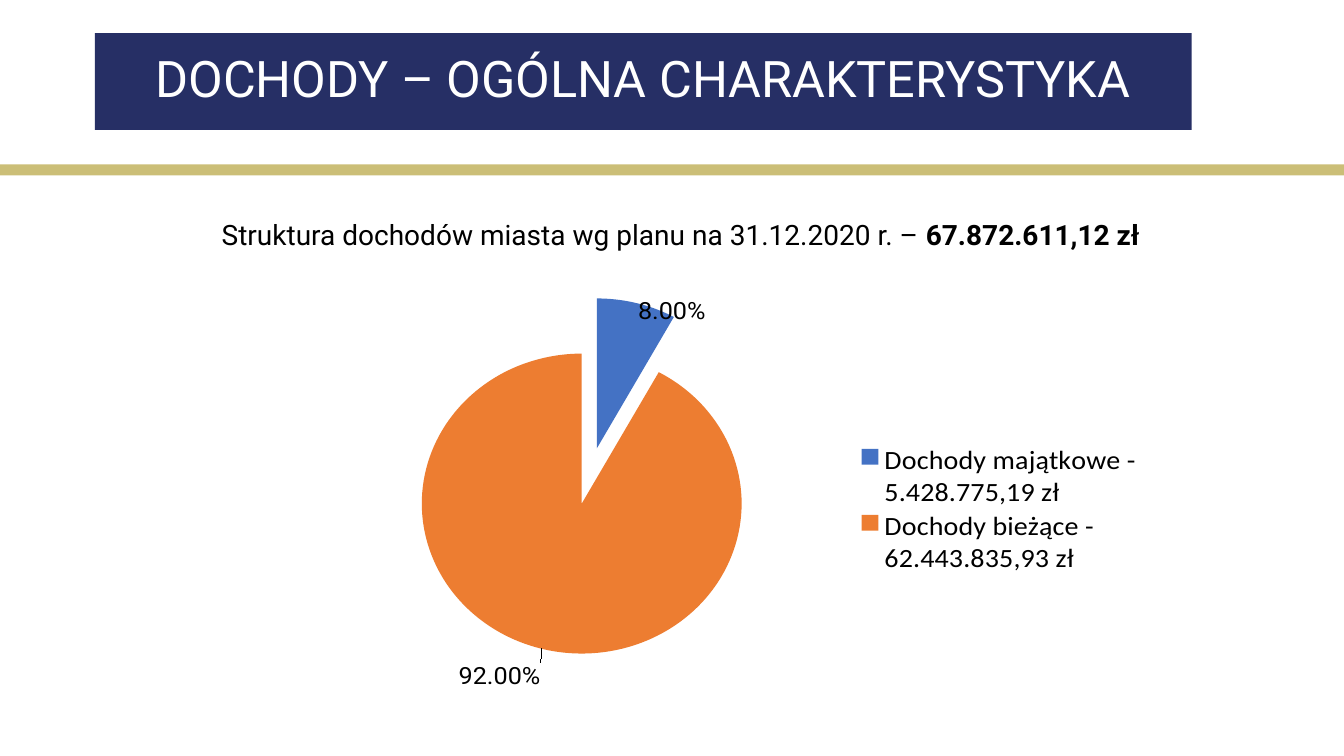
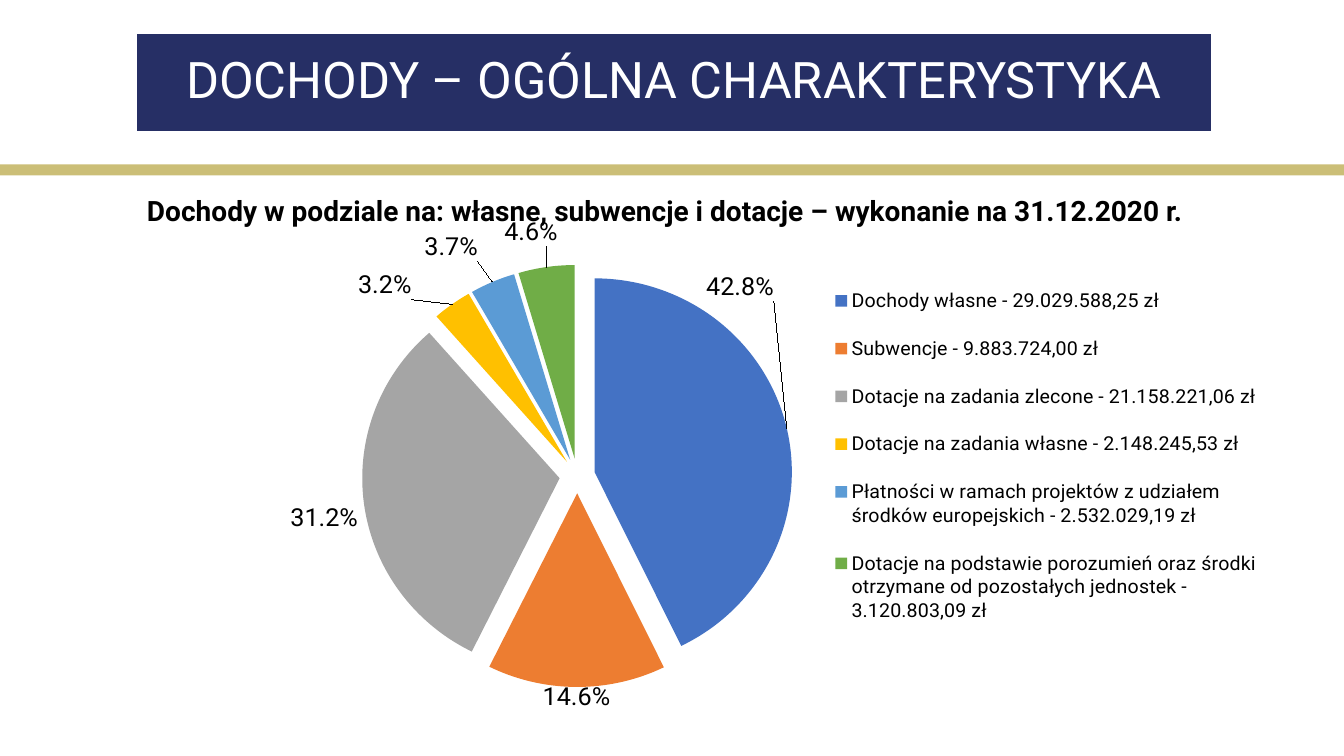
from lxml.etree import SubElement
from pptx import Presentation
from pptx.chart.data import CategoryChartData
from pptx.dml.color import RGBColor
from pptx.enum.chart import XL_CHART_TYPE, XL_LABEL_POSITION, XL_LEGEND_POSITION
from pptx.enum.shapes import MSO_SHAPE
from pptx.enum.text import MSO_ANCHOR, PP_ALIGN
from pptx.oxml.ns import qn
from pptx.util import Inches, Pt

COLORS = {
    "navy": "262F65", "gold": "CBBE77", "white": "FFFFFF", "black": "000000",
    "blue": "4472C4", "orange": "ED7D31", "gray": "A5A5A5",
    "yellow": "FFC000", "sky": "5B9BD5", "green": "70AD47",
}
SLICE_COLORS = ["blue", "orange", "gray", "yellow", "sky", "green"]
SLIDE_WIDTH, SLIDE_HEIGHT = 13.33, 7.5
FONT = "Roboto"
TITLE = "DOCHODY – OGÓLNA CHARAKTERYSTYKA"


def rgb(name):
    """Return the named colour."""
    return RGBColor.from_string(COLORS[name])


def style_font(font, size, color="black", name=FONT, bold=False):
    """Apply size, colour, face and weight to a font."""
    font.size, font.name, font.bold = Pt(size), name, bold
    font.color.rgb = rgb(color)


def write_text(frame, runs, size=20, color="black", align=PP_ALIGN.LEFT,
               anchor=MSO_ANCHOR.TOP, spacing=1.0):
    """Write one paragraph from (text, bold) pairs."""
    frame.word_wrap = True
    frame.vertical_anchor = anchor
    paragraph = frame.paragraphs[0]
    paragraph.alignment, paragraph.line_spacing = align, spacing
    for text, bold in runs:
        run = paragraph.add_run()
        run.text = text
        style_font(run.font, size, color, bold=bold)


def add_bar(slide, box, color):
    """Add a plain filled rectangle."""
    bar = slide.shapes.add_shape(MSO_SHAPE.RECTANGLE, *map(Inches, box))
    bar.shadow.inherit = False
    bar.fill.solid()
    bar.fill.fore_color.rgb = rgb(color)
    bar.line.fill.background()
    return bar


def add_header(slide, box):
    """Add the gold band and the navy title bar."""
    add_bar(slide, (0, 1.63, SLIDE_WIDTH, 0.11), "gold")
    title = add_bar(slide, box, "navy")
    write_text(title.text_frame, [(TITLE, False)], size=36, color="white",
               align=PP_ALIGN.CENTER, anchor=MSO_ANCHOR.MIDDLE, spacing=0.9)


def add_subtitle(slide, box, runs, **layout):
    """Add the line of text above the chart."""
    subtitle = slide.shapes.add_textbox(*map(Inches, box))
    write_text(subtitle.text_frame, runs, **layout)


def place(parent, index, x, y, size=None):
    """Give a chart part a manual layout in fractions of the chart."""
    for old in parent.findall(qn("c:layout")):
        parent.remove(old)
    layout = SubElement(parent, qn("c:layout"))
    parent.insert(index, layout)
    manual = SubElement(layout, qn("c:manualLayout"))
    settings = [("x", x), ("y", y)]
    if size:
        modes = [("xMode", "edge"), ("yMode", "edge")]
        settings = modes + settings + list(zip("wh", size))
        if parent.tag == qn("c:plotArea"):
            settings.insert(0, ("layoutTarget", "inner"))
    for tag, value in settings:
        SubElement(manual, qn(f"c:{tag}")).set("val", str(value))


def explode(series_xml, percent):
    """Pull all slices away from the centre."""
    explosion = SubElement(series_xml, qn("c:explosion"))
    explosion.set("val", str(percent))
    series_xml.find(qn("c:dPt")).addprevious(explosion)


def add_label(series, index, offset, number_format):
    """Move the label of one slice by an offset."""
    label = series.points[index].data_label
    style_font(label.font, 18)
    label.position = XL_LABEL_POSITION.OUTSIDE_END
    label_xml = next(item for item in series.data_labels._element.findall(qn("c:dLbl"))
                     if item.find(qn("c:idx")).get("val") == str(index))
    place(label_xml, 1, *offset)
    format_xml = SubElement(label_xml, qn("c:numFmt"))
    format_xml.set("formatCode", number_format)
    format_xml.set("sourceLinked", "0")
    label_xml.insert(2, format_xml)


def add_pie(slide, box, shares, number_format, explosion, plot, legend,
            legend_size, legend_font, offsets):
    """Add an exploded pie with a legend on the right."""
    data = CategoryChartData(number_format=number_format)
    data.categories = list(shares)
    data.add_series("Series 1", list(shares.values()))
    chart = slide.shapes.add_chart(XL_CHART_TYPE.PIE, *map(Inches, box), data).chart
    chart.has_title = False
    style_font(chart.font, 18, name="Calibri")
    chart.has_legend = True
    chart.legend.position = XL_LEGEND_POSITION.RIGHT
    chart.legend.include_in_layout = False
    style_font(chart.legend.font, legend_size, name=legend_font)
    chart.plots[0].vary_by_categories = True
    series = chart.plots[0].series[0]
    for index, color in enumerate(SLICE_COLORS[:len(shares)]):
        fill = series.points[index].format.fill
        fill.solid()
        fill.fore_color.rgb = rgb(color)
    labels = series.data_labels
    labels.show_value = True
    labels.number_format, labels.number_format_is_linked = number_format, False
    labels.position = XL_LABEL_POSITION.OUTSIDE_END
    style_font(labels.font, 18)
    for index, offset in offsets.items():
        add_label(series, index, offset, number_format)
    chart_xml = chart.element
    explode(next(chart_xml.iter(qn("c:ser"))), explosion)
    place(next(chart_xml.iter(qn("c:plotArea"))), 0, *plot[:2], size=plot[2:])
    place(next(chart_xml.iter(qn("c:legend"))), 1, *legend[:2], size=legend[2:])


def build_structure(slide):
    """Build the slide on the planned income structure."""
    add_header(slide, (0.94, 0.33, 10.88, 0.96))
    add_subtitle(slide, (2.1, 1.94, 9.39, 0.61), [
        ("Struktura dochodów miasta wg planu na 31.12.2020 r. – ", False),
        ("67.872.611,12 zł", True),
    ], align=PP_ALIGN.JUSTIFY, spacing=1.5)
    shares = {
        "Dochody majątkowe - 5.428.775,19 zł": 0.08,
        "Dochody bieżące - 62.443.835,93 zł": 0.92,
    }
    add_pie(slide, (2.26, 2.68, 9.56, 4.39), shares, "0.00%", 19,
            plot=(0.05, 0, 0.65, 0.86), legend=(0.64, 0.35, 0.32, 0.32),
            legend_size=20, legend_font="Calibri",
            offsets={0: (0, 0.04), 1: (0, 0.02)})


def build_breakdown(slide):
    """Build the slide on income by source."""
    add_header(slide, (1.36, 0.34, 10.65, 0.96))
    add_subtitle(slide, (1.36, 1.87, 10.8, 0.44), [
        ("Dochody w podziale na: własne, subwencje i dotacje – "
         "wykonanie na 31.12.2020 r.", True),
    ], anchor=MSO_ANCHOR.MIDDLE)
    shares = {
        "Dochody własne - 29.029.588,25 zł": 0.428,
        "Subwencje - 9.883.724,00 zł": 0.146,
        "Dotacje na zadania zlecone - 21.158.221,06 zł": 0.312,
        "Dotacje na zadania własne - 2.148.245,53 zł": 0.032,
        "Płatności w ramach projektów z udziałem środków europejskich"
        " - 2.532.029,19 zł": 0.037,
        "Dotacje na podstawie porozumień oraz środki otrzymane"
        " od pozostałych jednostek - 3.120.803,09 zł": 0.046,
    }
    add_pie(slide, (0.34, 2.08, 12.24, 5.08), shares, "0.0%", 9,
            plot=(0.05, 0.11, 0.78, 0.84), legend=(0.64, 0.11, 0.36, 0.76),
            legend_size=14, legend_font=FONT,
            offsets={0: (-0.07, -0.25), 3: (-0.03, 0),
                     4: (-0.01, -0.03), 5: (0.01, -0.03)})


def main():
    """Build and save the presentation."""
    deck = Presentation()
    deck.slide_width, deck.slide_height = Inches(SLIDE_WIDTH), Inches(SLIDE_HEIGHT)
    for build in (build_structure, build_breakdown):
        build(deck.slides.add_slide(deck.slide_layouts[6]))
    deck.save("out.pptx")


if __name__ == "__main__":
    main()
